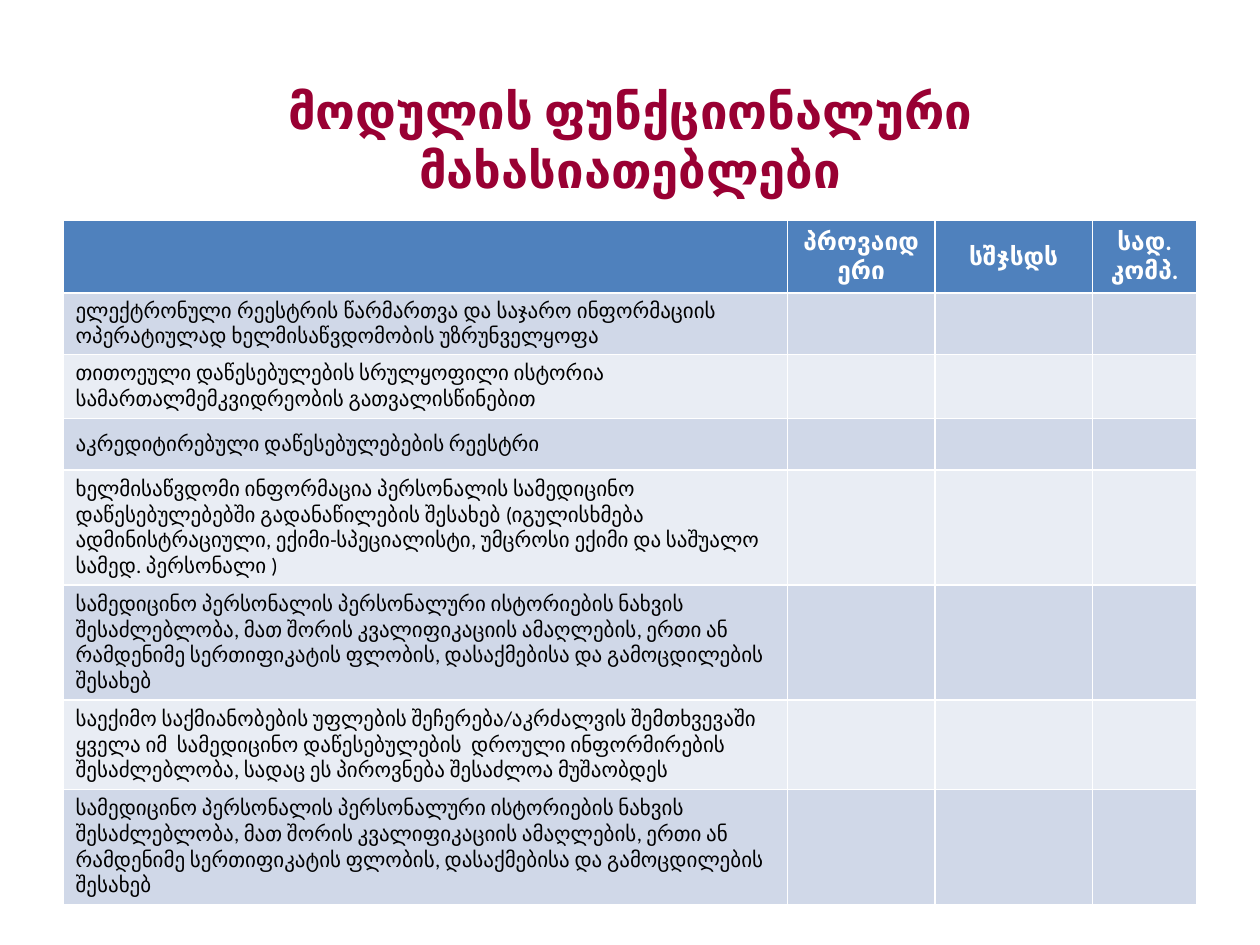
from pptx import Presentation
from pptx.dml.color import RGBColor
from pptx.enum import text
from pptx.util import Inches, Pt

THEME = {
    "title": RGBColor.from_string("990033"),
    "header": RGBColor.from_string("4F81BD"),
    "header_text": RGBColor.from_string("FFFFFF"),
    "body_text": RGBColor.from_string("000000"),
    "bands": [RGBColor.from_string("D0D8E8"), RGBColor.from_string("E9EDF4")],
    "font": "Calibri",
    "first_row_font": "Roboto",
    "title_size": Pt(28),
    "header_size": Pt(14),
    "body_size": Pt(12),
}

HEADERS = ["", "პროვაიდერი", "სშჯსდს", "სად. კომპ."]
PERSONNEL_HISTORY = (
    "სამედიცინო პერსონალის პერსონალური ისტორიების ნახვის შესაძლებლობა, "
    "მათ შორის კვალიფიკაციის ამაღლების, ერთი ან რამდენიმე სერთიფიკატის "
    "ფლობის, დასაქმებისა და გამოცდილების შესახებ"
)
FEATURES = [
    "ელექტრონული რეესტრის წარმართვა და საჯარო ინფორმაციის ოპერატიულად "
    "ხელმისაწვდომობის უზრუნველყოფა",
    "თითოეული დაწესებულების სრულყოფილი ისტორია სამართალმემკვიდრეობის "
    "გათვალისწინებით",
    "აკრედიტირებული დაწესებულებების რეესტრი",
    "ხელმისაწვდომი ინფორმაცია პერსონალის სამედიცინო დაწესებულებებში "
    "გადანაწილების შესახებ (იგულისხმება ადმინისტრაციული, "
    "ექიმი-სპეციალისტი, უმცროსი ექიმი და საშუალო სამედ. პერსონალი )",
    PERSONNEL_HISTORY,
    "საექიმო საქმიანობების უფლების შეჩერება/აკრძალვის შემთხვევაში ყველა "
    "იმ  სამედიცინო დაწესებულების  დროული ინფორმირების შესაძლებლობა, "
    "სადაც ეს პიროვნება შესაძლოა მუშაობდეს",
    PERSONNEL_HISTORY,
]
COLUMN_WIDTHS = [5.75, 1.17, 1.25, 0.83]
ROW_HEIGHT = 0.41


def write(frame, words, font, size, color, bold, alignment):
    frame.text = words
    paragraph = frame.paragraphs[0]
    paragraph.alignment = alignment
    paragraph.font.name = font
    paragraph.font.size = size
    paragraph.font.bold = bold
    paragraph.font.color.rgb = color


presentation = Presentation()
presentation.slide_width = Inches(10)
presentation.slide_height = Inches(7.5)
slide = presentation.slides.add_slide(presentation.slide_layouts[5])

title = slide.shapes.title
title.left, title.top = Inches(0.5), Inches(0.67)
title.width, title.height = Inches(9), Inches(0.87)
title.text_frame.auto_size = text.MSO_AUTO_SIZE.NONE
title.text_frame.vertical_anchor = text.MSO_ANCHOR.MIDDLE
write(title.text_frame, "მოდულის ფუნქციონალური მახასიათებლები", THEME["font"],
      THEME["title_size"], THEME["title"], True, text.PP_ALIGN.CENTER)

rows = [HEADERS] + [[feature, "", "", ""] for feature in FEATURES]
table = slide.shapes.add_table(
    len(rows), len(HEADERS), Inches(0.5), Inches(1.75),
    Inches(sum(COLUMN_WIDTHS)), Inches(ROW_HEIGHT * len(rows))).table
for column, width in zip(table.columns, COLUMN_WIDTHS):
    column.width = Inches(width)

for row_index, row in enumerate(rows):
    table.rows[row_index].height = Inches(ROW_HEIGHT)
    is_header = row_index == 0
    fill = THEME["header"] if is_header else THEME["bands"][(row_index - 1) % 2]
    for column_index, words in enumerate(row):
        cell = table.cell(row_index, column_index)
        cell.fill.solid()
        cell.fill.fore_color.rgb = fill
        cell.vertical_anchor = text.MSO_ANCHOR.MIDDLE
        if not words:
            continue
        if is_header:
            write(cell.text_frame, words, THEME["font"], THEME["header_size"],
                  THEME["header_text"], True, text.PP_ALIGN.CENTER)
        else:
            font = THEME["first_row_font"] if row_index == 1 else THEME["font"]
            write(cell.text_frame, words, font, THEME["body_size"],
                  THEME["body_text"], False, text.PP_ALIGN.LEFT)

presentation.save("out.pptx")
